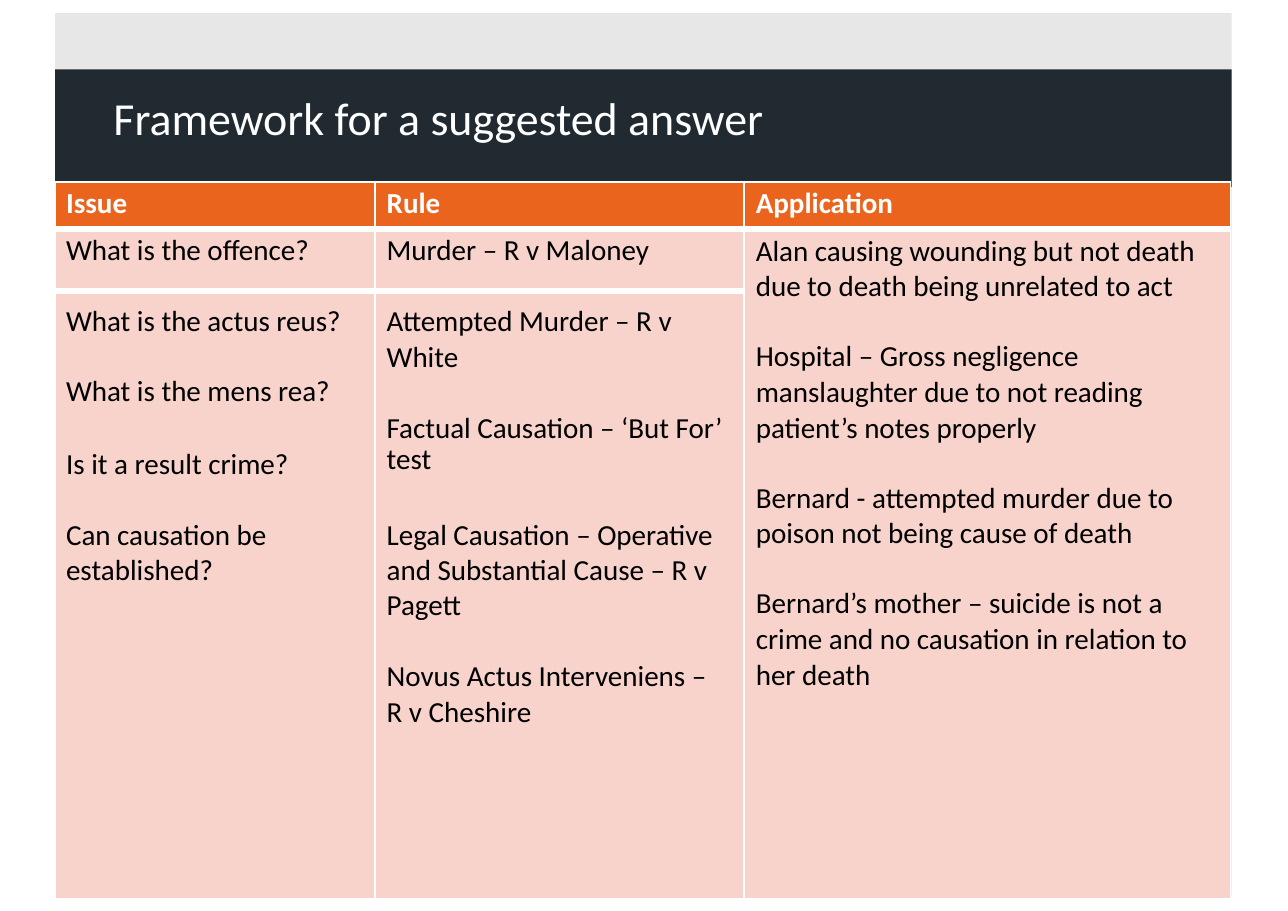
from dataclasses import dataclass

from lxml.etree import SubElement
from pptx import Presentation
from pptx.dml.color import RGBColor
from pptx.enum.shapes import MSO_SHAPE
from pptx.oxml.ns import qn
from pptx.util import Inches, Length, Pt

COLORS = {
    "white": "FFFFFF",
    "black": "000000",
    "panel": "171D23",
    "band": "202A30",
    "header": "EB641E",
    "body": "F7D3CC",
}
COL_WIDTHS = [2.9, 3.35, 4.42]
ROW_HEIGHTS = [1.02, 0.43, 0.56, 0.8, 0.33, 0.81, 1.28, 2.29]
ROW_RULES = {0: 1.5, 1: 4.5, 2: 4.5}
LAST_COL = len(COL_WIDTHS) - 1


@dataclass
class Entry:
    row: int
    col: int
    paras: list[str]
    top: float = 0.12
    spacing: float | Length = 1.0
    right: float = 0.1


ENTRIES = [
    Entry(2, 0, ["What is the offence?"], top=0.04),
    Entry(2, 1, ["Murder – R v Maloney"], top=0.04),
    Entry(2, 2, [
        "Alan causing wounding but not death due to death being unrelated to act",
        "Hospital – Gross negligence manslaughter due to not reading "
        "patient’s notes properly",
        "Bernard - attempted murder due to poison not being cause of death",
        "Bernard’s mother – suicide is not a crime and no causation "
        "in relation to her death",
    ], top=0.04, spacing=1.01),
    Entry(3, 0, ["What is the actus reus?"]),
    Entry(3, 1, ["Attempted Murder – R v White"], spacing=1.01),
    Entry(4, 0, ["What is the mens rea?"], top=0, spacing=Pt(19.9)),
    Entry(5, 0, ["Is it a result crime?"], top=0.29),
    Entry(5, 1, ["Factual Causation – ‘But For’ test"], top=0, spacing=Pt(20.4)),
    Entry(6, 0, ["Can causation be established?"]),
    Entry(6, 1, ["Legal Causation – Operative and Substantial Cause – R v Pagett"]),
    Entry(7, 1, ["Novus Actus Interveniens – R v Cheshire"], spacing=1.01, right=0.25),
]


def rgb(name: str) -> RGBColor:
    return RGBColor.from_string(COLORS[name])


def add_block(shapes, top: float, height: float, color: str, alpha: int = 100) -> None:
    sp = shapes.add_shape(MSO_SHAPE.RECTANGLE, Inches(0.5), Inches(top),
                          Inches(10.68), Inches(height))
    sp.shadow.inherit = False
    sp.line.fill.background()
    sp.fill.solid()
    sp.fill.fore_color.rgb = rgb(color)
    if alpha < 100:
        clr = sp.fill._xPr.find(qn("a:solidFill"))[0]
        SubElement(clr, qn("a:alpha"), val=str(alpha * 1000))


def set_text(cell, paras: list[str], *, size: float = 19, bold: bool = False,
             color: str = "black", left: float = 0.11, top: float = 0.04,
             right: float = 0.1, spacing: float | Length = 1.0, gap: float = 22.5) -> None:
    cell.margin_left, cell.margin_top = Inches(left), Inches(top)
    cell.margin_right = Inches(right)
    tf = cell.text_frame
    for i, text in enumerate(paras):
        p = tf.add_paragraph() if i else tf.paragraphs[0]
        p.line_spacing = spacing
        if i:
            p.space_before = Pt(gap)
        r = p.add_run()
        r.text = text
        r.font.name = "Calibri"
        r.font.size = Pt(size)
        r.font.bold = bold
        r.font.color.rgb = rgb(color)


def set_border(cell, side: str, width: float) -> None:
    ln = SubElement(cell._tc.get_or_add_tcPr(), qn(f"a:ln{side}"), w=str(Pt(width)))
    if width:
        fill = SubElement(ln, qn("a:solidFill"))
        SubElement(fill, qn("a:srgbClr"), val=COLORS["white"])
    else:
        SubElement(ln, qn("a:noFill"))


def style_cell(cell, row: int, col: int) -> None:
    cell.margin_left = cell.margin_right = cell.margin_top = cell.margin_bottom = 0
    merged_body = col == LAST_COL and row >= 2
    left = 0.75 if col == 0 else 1.5
    right = 0.75 if col == LAST_COL else 1.5
    set_border(cell, "L", left if row else 0)
    set_border(cell, "R", right if row else 0)
    set_border(cell, "T", 0 if merged_body and row > 2 else ROW_RULES.get(row - 1, 0))
    set_border(cell, "B", 0 if merged_body else ROW_RULES.get(row, 0))
    if row == 0:
        cell.fill.background()
    else:
        cell.fill.solid()
        cell.fill.fore_color.rgb = rgb("header" if row == 1 else "body")


def add_framework_table(shapes) -> None:
    table = shapes.add_table(len(ROW_HEIGHTS), len(COL_WIDTHS), Inches(0.5), Inches(0.63),
                             Inches(sum(COL_WIDTHS)), Inches(sum(ROW_HEIGHTS))).table
    table.first_row = table.horz_banding = False
    for column, width in zip(table.columns, COL_WIDTHS):
        column.width = Inches(width)
    for i, height in enumerate(ROW_HEIGHTS):
        table.rows[i].height = Inches(height)
        for j in range(len(COL_WIDTHS)):
            style_cell(table.cell(i, j), i, j)
    table.cell(0, 0).merge(table.cell(0, LAST_COL))
    table.cell(2, LAST_COL).merge(table.cell(len(ROW_HEIGHTS) - 1, LAST_COL))

    set_text(table.cell(0, 0), ["Framework for a suggested answer"],
             size=30, color="white", left=0.53, top=0.2)
    for j, heading in enumerate(["Issue", "Rule", "Application"]):
        set_text(table.cell(1, j), [heading], bold=True, color="white",
                 left=0.11 if j else 0.1)
    for e in ENTRIES:
        set_text(table.cell(e.row, e.col), e.paras, left=0.11 if e.col else 0.1,
                 top=e.top, right=e.right, spacing=e.spacing)


def main() -> None:
    prs = Presentation()
    prs.slide_width, prs.slide_height = Inches(11.69), Inches(8.27)
    s = prs.slides.add_slide(prs.slide_layouts[6])
    add_block(s.shapes, 0.12, 8.01, "panel", alpha=10)
    add_block(s.shapes, 0.63, 1.07, "band")
    add_framework_table(s.shapes)
    prs.save("out.pptx")


if __name__ == "__main__":
    main()
